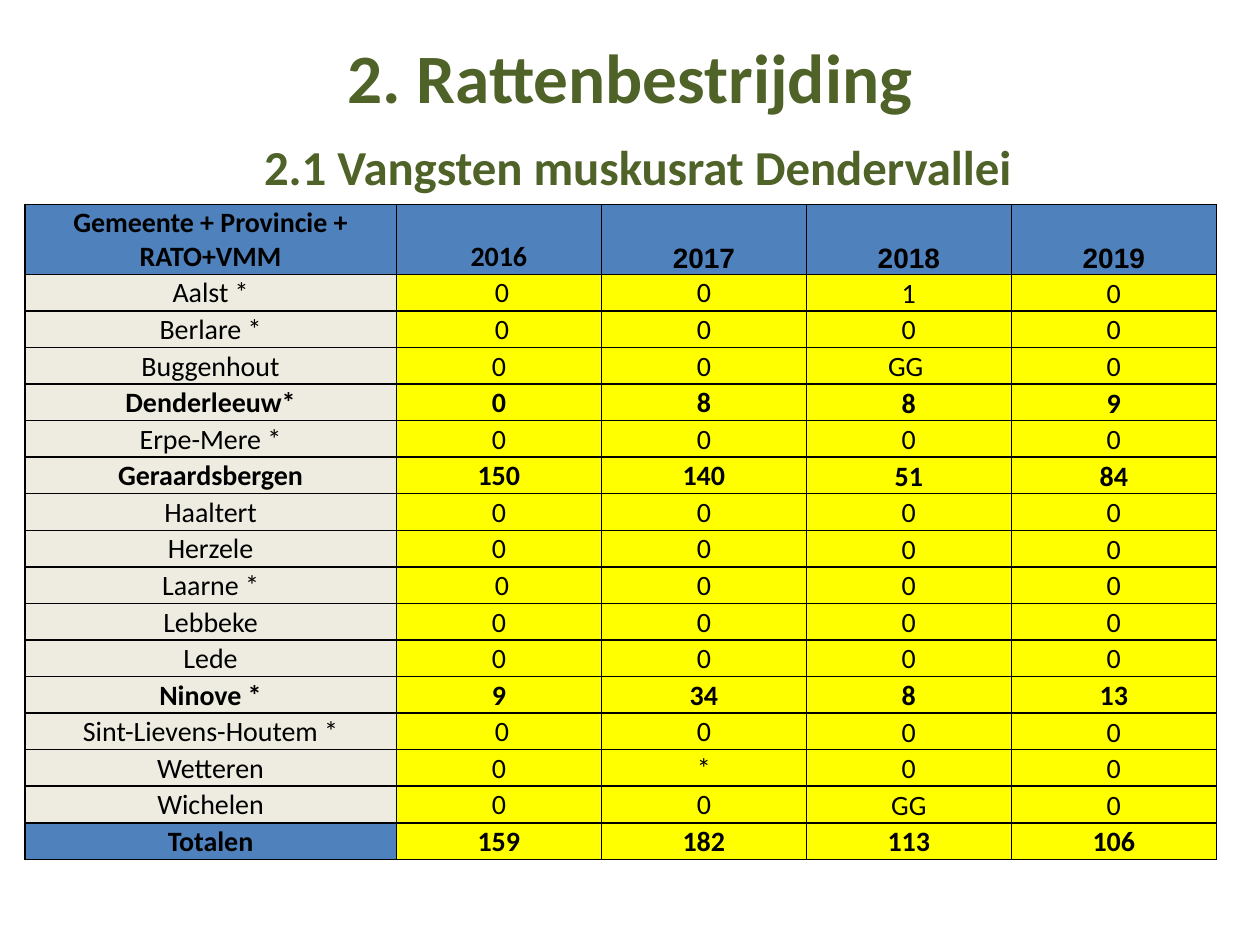
from lxml import etree
from pptx import Presentation
from pptx.dml.color import RGBColor
from pptx.enum.text import MSO_ANCHOR, PP_ALIGN
from pptx.oxml.ns import qn
from pptx.util import Cm, Pt

CENTER = PP_ALIGN.CENTER
MIDDLE, BOTTOM = MSO_ANCHOR.MIDDLE, MSO_ANCHOR.BOTTOM

COLORS = {
    "title": "4F6228",
    "text": "000000",
    "border": "000000",
    "header": "4F81BD",
    "name": "EEECE1",
    "value": "FFFF00",
}

HEADER = ["Gemeente + Provincie + RATO+VMM", "2016", "2017", "2018", "2019"]
CATCHES = [
    ["Aalst *", " 0", "0", "1", "0"],
    ["Berlare *", " 0", "0", "0", "0"],
    ["Buggenhout", "0", "0", "GG ", "0"],
    ["Denderleeuw*", "0", "8", "8", "9"],
    ["Erpe-Mere *", "0", "0", "0", "0"],
    ["Geraardsbergen", "150", "140", "51", "84"],
    ["Haaltert", "0", "0", "0", "0"],
    ["Herzele", "0", "0", "0", "0"],
    ["Laarne *", " 0", "0", "0", "0"],
    ["Lebbeke", "0", "0", "0", "0"],
    ["Lede", "0", "0", "0", "0"],
    ["Ninove *", "9", "34", "8", "13"],
    ["Sint-Lievens-Houtem *", " 0", "0", "0", "0"],
    ["Wetteren", "0", "*", "0", "0"],
    ["Wichelen", "0", "0", "GG", "0"],
]
TOTALS = ["Totalen", "159", "182", "113", "106"]
BOLD_NAMES = {HEADER[0], "Denderleeuw*", "Geraardsbergen", "Ninove *", TOTALS[0]}


def style_paragraph(paragraph, size, color, bold=True, font_name="Calibri"):
    paragraph.alignment = CENTER
    font = paragraph.font
    font.name, font.size, font.bold = font_name, Pt(size), bold
    font.color.rgb = RGBColor.from_string(COLORS[color])


def add_title(slide, left, top, width, height):
    frame = slide.shapes.add_textbox(left, top, width, height).text_frame
    frame.word_wrap = True
    frame.vertical_anchor = MIDDLE
    heading = frame.paragraphs[0]
    heading.text = "2. Rattenbestrijding"
    style_paragraph(heading, 39.6, "title")
    subheading = frame.add_paragraph()
    subheading.text = "2.1 Vangsten muskusrat Dendervallei"
    subheading.space_before = Pt(11)
    style_paragraph(subheading, 27.9, "title")
    subheading._p.get_or_add_pPr().set("marL", str(Cm(0.32)))


def add_borders(cell):
    properties = cell._tc.get_or_add_tcPr()
    for position, side in enumerate(("a:lnL", "a:lnR", "a:lnT", "a:lnB")):
        line = etree.Element(qn(side), w=str(Pt(1)))
        fill = etree.SubElement(line, qn("a:solidFill"))
        etree.SubElement(fill, qn("a:srgbClr"), val=COLORS["border"])
        properties.insert(position, line)


def fill_cell(cell, text, fill, anchor, bold, font_name):
    cell.margin_left = cell.margin_right = cell.margin_top = Cm(0.03)
    cell.margin_bottom = 0
    cell.vertical_anchor = anchor
    cell.fill.solid()
    cell.fill.fore_color.rgb = RGBColor.from_string(COLORS[fill])
    add_borders(cell)
    paragraph = cell.text_frame.paragraphs[0]
    paragraph.text = text
    style_paragraph(paragraph, 16, "text", bold, font_name)


def add_catch_table(slide, left, top, width, height):
    rows = [HEADER, *CATCHES, TOTALS]
    last_row, last_column = len(rows) - 1, len(HEADER) - 1
    table = slide.shapes.add_table(
        len(rows), len(HEADER), left, top, width, height).table

    name_width, header_height = Cm(7.49), Cm(1.4)
    for index, column in enumerate(table.columns):
        column.width = name_width if index == 0 else (width - name_width) // last_column
    for index, row in enumerate(table.rows):
        row.height = header_height if index == 0 else (height - header_height) // last_row

    for r, values in enumerate(rows):
        for c, text in enumerate(values):
            if r == 0 or (r == last_row and c == 0):
                fill = "header"
            else:
                fill = "name" if c == 0 else "value"
            if r == last_row:
                anchor = MIDDLE if c == last_column else BOTTOM
            else:
                anchor = BOTTOM if r == 0 or c >= 3 else MIDDLE
            font_name = "Arial" if r == 0 and c >= 2 else "Calibri"
            fill_cell(table.cell(r, c), text, fill, anchor,
                      values[0] in BOLD_NAMES, font_name)


def main():
    presentation = Presentation()
    presentation.slide_width, presentation.slide_height = Cm(25.4), Cm(19.05)
    slide = presentation.slides.add_slide(presentation.slide_layouts[6])
    add_catch_table(slide, Cm(0.5), Cm(4.12), Cm(24.02), Cm(13.2))
    add_title(slide, Cm(1.27), Cm(0.72), Cm(22.86), Cm(3.18))
    presentation.save("out.pptx")


if __name__ == "__main__":
    main()
